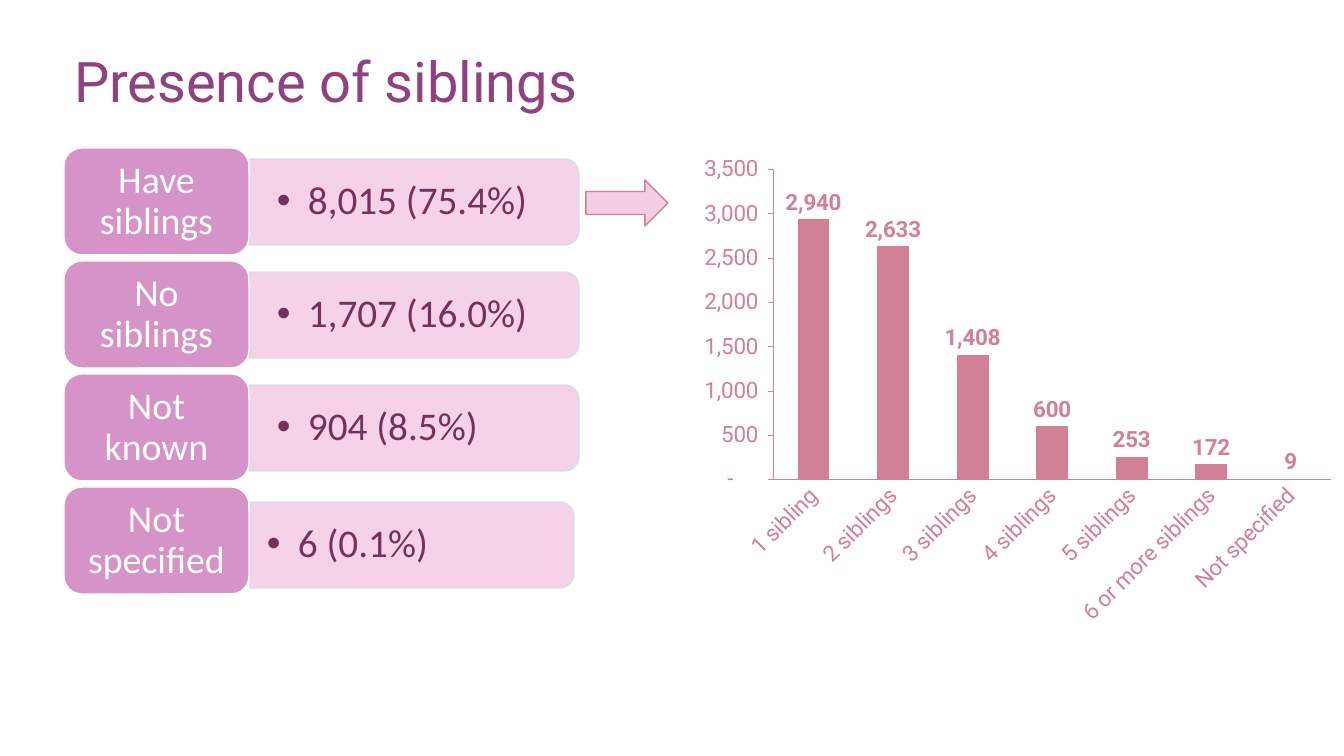
import pptx
import pptx.chart.data
import pptx.dml.color
import pptx.enum.chart
import pptx.enum.shapes
import pptx.enum.text
import pptx.oxml
import pptx.oxml.ns
import pptx.util

TITLE = "Presence of siblings"
ROWS = [
    ("Have siblings", "8,015 (75.4%)"),
    ("No siblings", "1,707 (16.0%)"),
    ("Not known", "904 (8.5%)"),
    ("Not specified", "6 (0.1%)"),
]
SIBLING_COUNTS = {
    "1 sibling": 2940,
    "2 siblings": 2633,
    "3 siblings": 1408,
    "4 siblings": 600,
    "5 siblings": 253,
    "6 or more siblings": 172,
    "Not specified": 9,
}
NUMBER_FORMAT = '_(* #,##0_);_(* \\(#,##0\\);_(* "-"??_);_(@_)'
COLORS = {
    "title": "8F4180",
    "label": "D593C7",
    "white": "FFFFFF",
    "bar": "F4CEE5",
    "bar_line": "D2DEEF",
    "figure": "72325B",
    "rose": "D18096",
}
PLOT_AREA = {"x": 0.149, "y": 0.042, "w": 0.849, "h": 0.63}

# Lengths in px
SLIDE_SIZE = (1344, 756)
TITLE_BOX = (64, 41, 599, 78)
LABEL_LEFT, LABEL_TOP, LABEL_WIDTH, LABEL_HEIGHT = 64, 148, 185, 107
ROW_PITCH = 113
BAR_HEIGHT = 86
# left, offset from label top, width, text inset
BAR = (249, 11, 330, 28)
LAST_BAR = (250, 15, 324, 17)
BULLET_INDENT = 31
ARROW_BOX = (586, 180, 82, 46)
CHART_BOX = (676, 149, 656, 492)


def px(length):
    return pptx.util.Emu(round(length * 914400 / 100.8))


def rgb(name):
    return pptx.dml.color.RGBColor.from_string(COLORS[name])


def style_font(font, name, size, color, bold=False):
    font.name, font.size, font.bold = name, pptx.util.Pt(size), bold
    font.color.rgb = rgb(color)


def add_outlined(kind, box, fill, line):
    shape = slide.shapes.add_shape(kind, *map(px, box))
    shape.shadow.inherit = False
    shape.fill.solid()
    shape.fill.fore_color.rgb = rgb(fill)
    shape.line.color.rgb = rgb(line)
    shape.line.width = pptx.util.Pt(1)
    return shape


def set_middle_text(shape, text, size, color, inset_x, inset_y):
    frame = shape.text_frame
    frame.word_wrap = True
    frame.vertical_anchor = pptx.enum.text.MSO_ANCHOR.MIDDLE
    frame.margin_left = frame.margin_right = px(inset_x)
    frame.margin_top = frame.margin_bottom = px(inset_y)
    paragraph = frame.paragraphs[0]
    paragraph.text = text
    paragraph.line_spacing = 0.9
    style_font(paragraph.font, "Calibri", size, color)
    return paragraph


def add_bullet(paragraph):
    paragraph.level = 1
    properties = paragraph._p.get_or_add_pPr()
    properties.set("marL", str(px(BULLET_INDENT)))
    properties.set("indent", str(-px(BULLET_INDENT)))
    for element in ('buFont typeface="Arial"', 'buChar char="•"'):
        tag, attribute = element.split()
        bullet = pptx.oxml.parse_xml(
            f'<a:{tag} {pptx.oxml.ns.nsdecls("a")} {attribute}/>')
        properties.insert_element_before(
            bullet, "a:tabLst", "a:defRPr", "a:extLst")


def add_bar(left, top, width):
    """Add a bar rounded on its right: a top-rounded shape turned by 90 degrees."""
    shift = (width - BAR_HEIGHT) / 2
    bar = add_outlined(pptx.enum.shapes.MSO_SHAPE.ROUND_2_SAME_RECTANGLE,
                       (left + shift, top - shift, BAR_HEIGHT, width),
                       "bar", "bar_line")
    bar.rotation = 90
    for color in bar._element.spPr.iter(pptx.oxml.ns.qn("a:srgbClr")):
        color.append(pptx.oxml.parse_xml(
            f'<a:alpha {pptx.oxml.ns.nsdecls("a")} val="90000"/>'))


def add_row(index, label, figure):
    top = LABEL_TOP + index * ROW_PITCH
    left, offset, width, inset = LAST_BAR if index == len(ROWS) - 1 else BAR
    add_bar(left, top + offset, width)
    box = slide.shapes.add_textbox(
        *map(px, (left, top + offset, width, BAR_HEIGHT)))
    add_bullet(set_middle_text(box, figure, 28, "figure", inset, 8))

    label_shape = add_outlined(
        pptx.enum.shapes.MSO_SHAPE.ROUNDED_RECTANGLE,
        (LABEL_LEFT, top, LABEL_WIDTH, LABEL_HEIGHT), "label", "white")
    paragraph = set_middle_text(label_shape, label, 27, "white", 11, 6)
    paragraph.alignment = pptx.enum.text.PP_ALIGN.CENTER


def place_plot_area(chart):
    plot_area = chart._chartSpace.chart.plotArea
    for layout in plot_area.findall(pptx.oxml.ns.qn("c:layout")):
        plot_area.remove(layout)
    modes = '<c:xMode val="edge"/><c:yMode val="edge"/>'
    sizes = "".join(f'<c:{key} val="{value}"/>' for key, value in PLOT_AREA.items())
    plot_area.insert(0, pptx.oxml.parse_xml(
        f'<c:layout {pptx.oxml.ns.nsdecls("c")}><c:manualLayout>'
        f'<c:layoutTarget val="inner"/>{modes}{sizes}</c:manualLayout></c:layout>'))


def add_sibling_chart():
    data = pptx.chart.data.CategoryChartData()
    data.categories = list(SIBLING_COUNTS)
    data.add_series("Series 1", list(SIBLING_COUNTS.values()))
    chart = slide.shapes.add_chart(
        pptx.enum.chart.XL_CHART_TYPE.COLUMN_CLUSTERED,
        *map(px, CHART_BOX), data).chart
    chart.has_title = chart.has_legend = False
    style_font(chart.font, "Roboto", 16, "rose")
    place_plot_area(chart)

    tick_mark = pptx.enum.chart.XL_TICK_MARK
    for axis, mark in ((chart.category_axis, tick_mark.NONE),
                       (chart.value_axis, tick_mark.OUTSIDE)):
        axis.has_major_gridlines = False
        axis.major_tick_mark, axis.minor_tick_mark = mark, tick_mark.NONE
        axis.format.line.color.rgb = rgb("rose")
        axis.format.line.width = pptx.util.Pt(0.75)
        style_font(axis.tick_labels.font, "Roboto", 16, "rose")
    category_text = chart.category_axis._element.find(pptx.oxml.ns.qn("c:txPr"))
    category_text.find(pptx.oxml.ns.qn("a:bodyPr")).set("rot", "-2700000")
    value_axis = chart.value_axis
    value_axis.minimum_scale, value_axis.maximum_scale = 0, 3500
    value_axis.major_unit = 500

    plot = chart.plots[0]
    plot.gap_width = 150
    plot.vary_by_categories = False
    fill = plot.series[0].format.fill
    fill.solid()
    fill.fore_color.rgb = rgb("rose")
    plot.has_data_labels = True
    labels = plot.data_labels
    labels.show_value = True
    labels.position = pptx.enum.chart.XL_LABEL_POSITION.OUTSIDE_END
    style_font(labels.font, "Roboto", 16, "rose", bold=True)
    for numbers in (value_axis.tick_labels, labels):
        numbers.number_format = NUMBER_FORMAT
        numbers.number_format_is_linked = False


presentation = pptx.Presentation()
presentation.slide_width, presentation.slide_height = map(px, SLIDE_SIZE)
slide = presentation.slides.add_slide(presentation.slide_layouts[5])

title = slide.shapes.title
title.left, title.top, title.width, title.height = map(px, TITLE_BOX)
title.text_frame.vertical_anchor = pptx.enum.text.MSO_ANCHOR.TOP
title_paragraph = title.text_frame.paragraphs[0]
title_paragraph.text = TITLE
title_paragraph.alignment = pptx.enum.text.PP_ALIGN.LEFT
style_font(title_paragraph.font, "Roboto", 40, "title")

for row_index, (row_label, row_figure) in enumerate(ROWS):
    add_row(row_index, row_label, row_figure)
add_outlined(pptx.enum.shapes.MSO_SHAPE.RIGHT_ARROW, ARROW_BOX, "bar", "rose")
add_sibling_chart()

presentation.save("out.pptx")
